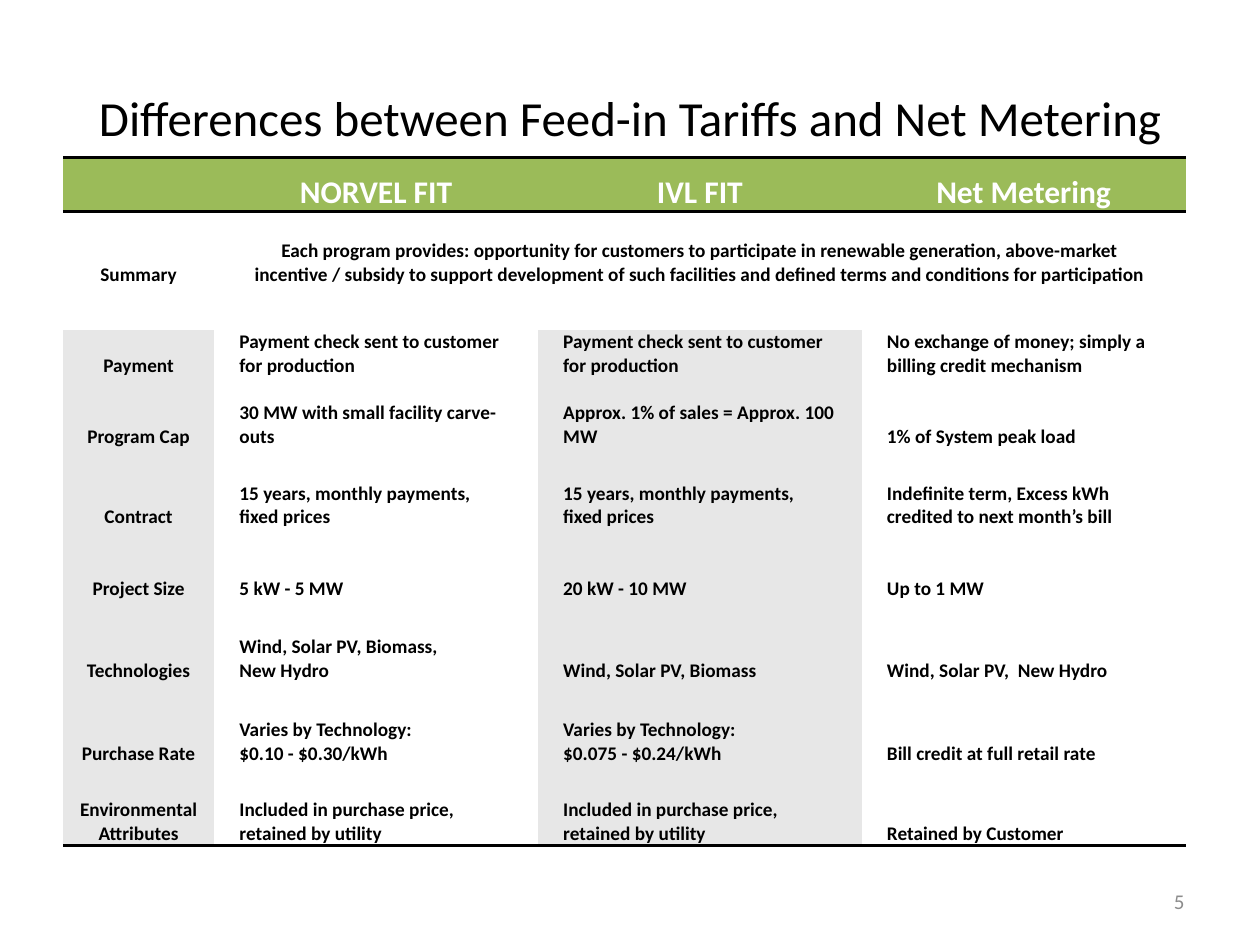
from lxml import etree
from pptx import Presentation
from pptx.dml.color import RGBColor
from pptx.enum import text
from pptx.oxml import ns
from pptx.util import Inches, Pt

FONT = "Calibri"
COLORS = {
    "black": "000000",
    "white": "FFFFFF",
    "green": "9BBB59",
    "band": "E7E7E7",
    "number": "8C8C8C",
}
COLUMN_WIDTHS = [1.2, 2.57, 2.57, 2.57]
NO_STYLE = "{2D5ABB26-0587-4C30-8999-92F81FD0307C}"

HEADER = ["", "NORVEL FIT", "IVL FIT", "Net Metering"]
SUMMARY = (
    "Each program provides: opportunity for customers to participate in renewable "
    "generation, above-market incentive / subsidy to support development of such "
    "facilities and defined terms and conditions for participation"
)
# Each entry: row height, height of the spacer row above it, cell texts
CONTENT = [
    (0.34, 0.22, ["Summary", SUMMARY, "", ""]),
    (0.34, 0.34, ["Payment", "Payment check sent to customer for production",
                  "Payment check sent to customer for production",
                  "No exchange of money; simply a billing credit mechanism"]),
    (0.34, 0.19, ["Program Cap", "30 MW with small facility carve-outs",
                  "Approx. 1% of sales = Approx. 100 MW", "1% of System peak load"]),
    (0.34, 0.26, ["Contract", "15 years, monthly payments, fixed prices",
                  "15 years, monthly payments, fixed prices",
                  "Indefinite term, Excess kWh credited to next month’s bill"]),
    (0.32, 0.25, ["Project Size", "5 kW - 5 MW", "20 kW - 10 MW", "Up to 1 MW"]),
    (0.34, 0.27, ["Technologies", "Wind, Solar PV, Biomass,\nNew Hydro",
                  "Wind, Solar PV, Biomass", "Wind, Solar PV,  New Hydro"]),
    (0.41, 0.25, ["Purchase Rate", "Varies by Technology:\n$0.10 - $0.30/kWh",
                  "Varies by Technology:\n$0.075 - $0.24/kWh",
                  "Bill credit at full retail rate"]),
    (0.34, 0.26, ["Environmental Attributes",
                  "Included in purchase price, retained by utility",
                  "Included in purchase price, retained by utility",
                  "Retained by Customer"]),
]
SUMMARY_ROW = 2
FIRST_BANDED_ROW = 4


def add_run(paragraph, words, size, color, bold=False):
    run = paragraph.add_run()
    run.text = words
    run.font.name = FONT
    run.font.size = Pt(size)
    run.font.bold = bold
    run.font.color.rgb = RGBColor.from_string(COLORS[color])


def add_border(cell, side):
    line = etree.SubElement(cell._tc.get_or_add_tcPr(), ns.qn(f"a:ln{side}"),
                            w=str(Pt(2)))
    fill = etree.SubElement(line, ns.qn("a:solidFill"))
    etree.SubElement(fill, ns.qn("a:srgbClr"), val=COLORS["black"])


def fill_cell(cell, words, size, color, alignment, side_margin, fill, borders):
    for side in borders:
        add_border(cell, side)
    cell.fill.solid()
    cell.fill.fore_color.rgb = RGBColor.from_string(COLORS[fill])
    cell.vertical_anchor = text.MSO_ANCHOR.BOTTOM
    cell.margin_left = cell.margin_right = Inches(side_margin)
    cell.margin_top = cell.margin_bottom = 0
    frame = cell.text_frame
    if not words:
        # The end mark sets the line height of an empty cell
        etree.SubElement(frame.paragraphs[0]._p, ns.qn("a:endParaRPr"),
                         sz=str(size * 100))
        return
    for index, line in enumerate(words.split("\n")):
        paragraph = frame.add_paragraph() if index else frame.paragraphs[0]
        paragraph.alignment = alignment
        add_run(paragraph, line, size, color, bold=True)


def add_title(slide, left, top, width, height):
    title = slide.shapes.title
    title.left, title.top = Inches(left), Inches(top)
    title.width, title.height = Inches(width), Inches(height)
    frame = title.text_frame
    frame.vertical_anchor = text.MSO_ANCHOR.MIDDLE
    paragraph = frame.paragraphs[0]
    paragraph.alignment = text.PP_ALIGN.CENTER
    add_run(paragraph, "Differences between Feed-in Tariffs and Net Metering",
            28, "black")


def add_comparison_table(slide, left, top, width):
    rows = [(0.43, HEADER)]
    for height, gap, words in CONTENT:
        rows += [(gap, [""] * len(HEADER)), (height, words)]
    total = sum(height for height, _ in rows)
    frame = slide.shapes.add_table(len(rows), len(HEADER), Inches(left),
                                   Inches(top), Inches(width), Inches(total))
    table = frame.table
    table.first_row = table.horz_banding = False
    table._tbl.tblPr.find(ns.qn("a:tableStyleId")).text = NO_STYLE
    for column, column_width in zip(table.columns, COLUMN_WIDTHS):
        column.width = Inches(column_width)

    last_row = len(rows) - 1
    for row, (height, words) in enumerate(rows):
        table.rows[row].height = Inches(height)
        header = row == 0
        borders = "TB" if header else "B" if row == last_row else ""
        for column, cell_words in enumerate(words):
            label = header or column == 0
            centered = label or row == SUMMARY_ROW
            banded = row >= FIRST_BANDED_ROW and column in (0, 2)
            fill_cell(
                table.cell(row, column), cell_words,
                size=18 if header else 11,
                color="white" if header else "black",
                alignment=text.PP_ALIGN.CENTER if centered else text.PP_ALIGN.LEFT,
                side_margin=0.01 if label else 0.2,
                fill="green" if header else "band" if banded else "white",
                borders=borders,
            )
    table.cell(SUMMARY_ROW, 1).merge(table.cell(SUMMARY_ROW, 3))


def add_page_number(slide, left, top, width, height):
    box = slide.shapes.add_textbox(Inches(left), Inches(top),
                                   Inches(width), Inches(height))
    frame = box.text_frame
    frame.word_wrap = True
    frame.vertical_anchor = text.MSO_ANCHOR.MIDDLE
    paragraph = frame.paragraphs[0]
    paragraph.alignment = text.PP_ALIGN.RIGHT
    add_run(paragraph, "5", 12, "number")


def main():
    presentation = Presentation()
    presentation.slide_width = Inches(10)
    presentation.slide_height = Inches(7.5)
    slide = presentation.slides.add_slide(presentation.slide_layouts[5])
    add_title(slide, 0.5, 0.3, 9, 1.25)
    add_comparison_table(slide, 0.5, 1.25, 8.92)
    add_page_number(slide, 7.17, 6.95, 2.33, 0.4)
    presentation.save("out.pptx")


if __name__ == "__main__":
    main()
